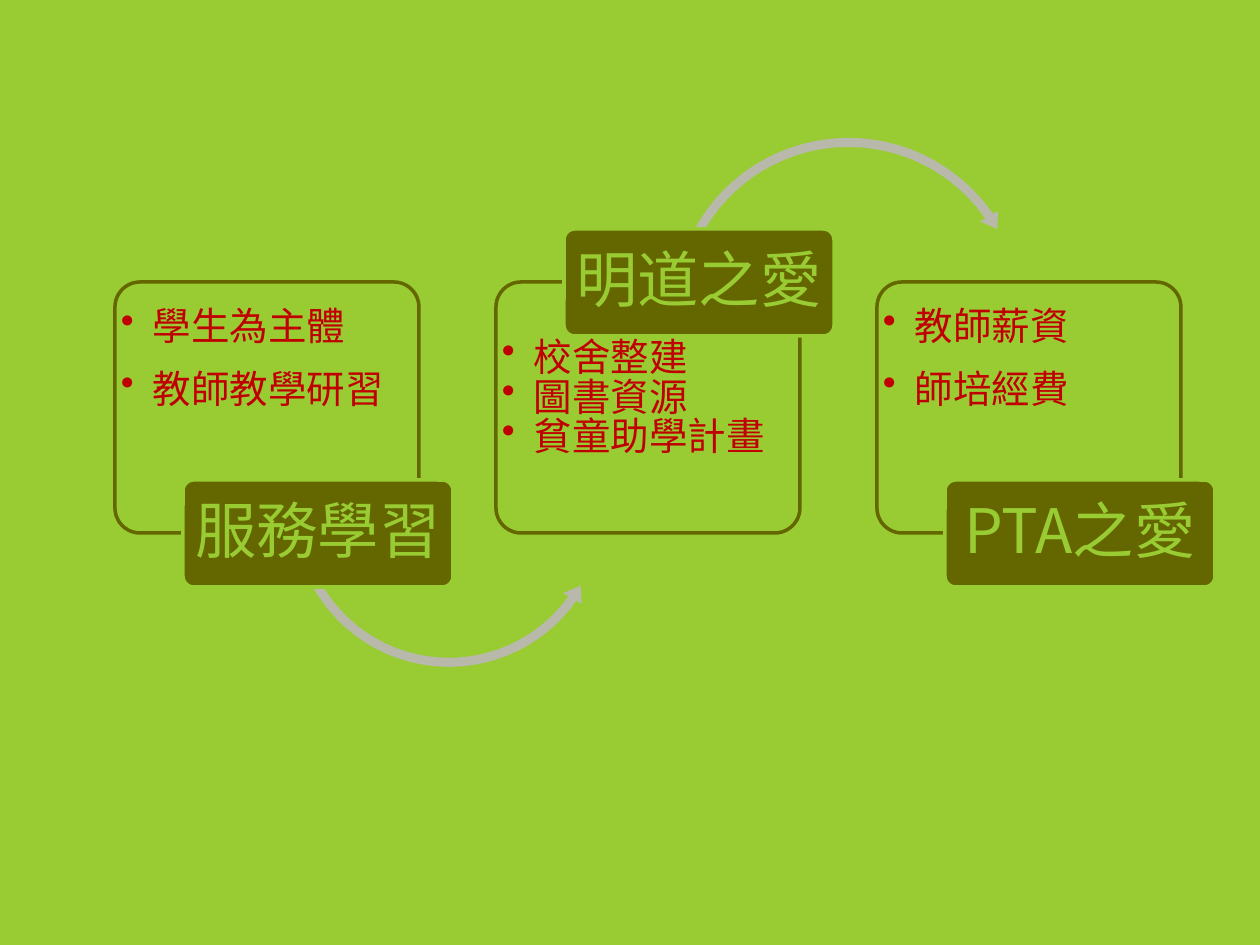
from dataclasses import dataclass

from lxml import etree
from pptx import Presentation
from pptx import util as u
from pptx.dml.color import RGBColor
from pptx.enum import shapes, text
from pptx.oxml.ns import qn

EMU_PER_PX = 914400 / 126
FRAME_LEFT, FRAME_TOP, FRAME_WIDTH, FRAME_HEIGHT = 115, 282, 304, 251
FRAME_PITCH = 381
BODY_HEIGHT = 197
LABEL_WIDTH, LABEL_HEIGHT, LABEL_SHIFT = 270, 107, 68
BULLET_INDENT = 32


@dataclass(frozen=True)
class Theme:
    background: RGBColor = RGBColor.from_string("99CC33")
    olive: RGBColor = RGBColor.from_string("646600")
    arrow: RGBColor = RGBColor.from_string("B8B8AB")
    bullet: RGBColor = RGBColor.from_string("C00000")
    font: str = "Noto Sans CJK SC"
    body_size: int = 22
    label_size: int = 35
    line_width: int = 2


THEME = Theme()

STAGES = [
    ("服務學習", ["學生為主體", "教師教學研習"], False),
    ("明道之愛", ["校舍整建", "圖書資源", "貧童助學計畫"], True),
    ("PTA之愛", ["教師薪資", "師培經費"], False),
]

ARROWS = [
    (shapes.MSO_SHAPE.LEFT_CIRCULAR_ARROW, (287, 349, 324, 324),
     (0.028, 3.452, 21.207, 90.245, 0.033)),
    (shapes.MSO_SHAPE.CIRCULAR_ARROW, (667, 132, 363, 363),
     (0.025, 3.062, 195.183, 125.755, 0.029)),
]


def px(value):
    return u.Emu(round(value * EMU_PER_PX))


def apply_format(target, values):
    for name, value in values.items():
        setattr(target, name, value)


def add_preset(slide, kind, box, adjustments, fill, line=None):
    shape = slide.shapes.add_shape(kind, *map(px, box))
    shape.shadow.inherit = False
    for index, value in enumerate(adjustments):
        shape.adjustments[index] = value
    shape.fill.solid()
    shape.fill.fore_color.rgb = fill
    if line is None:
        shape.line.fill.background()
    else:
        shape.line.color.rgb = line
        shape.line.width = u.Pt(THEME.line_width)
    return shape


def set_frame_format(text_frame, side, anchor, wrap):
    apply_format(text_frame, {
        "margin_left": px(side), "margin_right": px(side),
        "margin_top": px(6), "margin_bottom": px(6),
        "vertical_anchor": anchor, "word_wrap": wrap,
    })


def write_run(paragraph, wording, size, color):
    run = paragraph.add_run()
    run.text = wording
    apply_format(run.font, {"name": THEME.font, "size": u.Pt(size)})
    run.font.color.rgb = color
    etree.SubElement(run.font._element, qn("a:ea"), typeface=THEME.font)


def add_bullet(paragraph):
    properties = paragraph._p.get_or_add_pPr()
    properties.set("marL", str(px(BULLET_INDENT)))
    properties.set("indent", str(-px(BULLET_INDENT)))
    etree.SubElement(properties, qn("a:buChar"), char="•")


def add_frame(slide, left):
    frame = add_preset(slide, shapes.MSO_SHAPE.ROUNDED_RECTANGLE,
                       (left, FRAME_TOP, FRAME_WIDTH, FRAME_HEIGHT),
                       [0.1], THEME.background, THEME.olive)
    color = frame._element.spPr.find(qn("a:solidFill"))[0]
    etree.SubElement(color, qn("a:alpha"), val="90000")


def add_bullets(slide, left, top, items, line_spacing):
    box = slide.shapes.add_textbox(*map(px, (left, top, FRAME_WIDTH, BODY_HEIGHT)))
    set_frame_format(box.text_frame, 6, text.MSO_ANCHOR.TOP, True)
    for index, item in enumerate(items):
        paragraph = (box.text_frame.add_paragraph() if index
                     else box.text_frame.paragraphs[0])
        add_bullet(paragraph)
        apply_format(paragraph, {"line_spacing": line_spacing,
                                 "space_after": u.Pt(1.5)})
        write_run(paragraph, item, THEME.body_size, THEME.bullet)


def add_label(slide, left, top, wording):
    label = add_preset(slide, shapes.MSO_SHAPE.ROUNDED_RECTANGLE,
                       (left, top, LABEL_WIDTH, LABEL_HEIGHT),
                       [0.1], THEME.olive, THEME.background)
    set_frame_format(label.text_frame, 9, text.MSO_ANCHOR.MIDDLE, False)
    paragraph = label.text_frame.paragraphs[0]
    apply_format(paragraph, {"alignment": text.PP_ALIGN.CENTER, "line_spacing": 0.9})
    write_run(paragraph, wording, THEME.label_size, THEME.background)


def add_stage(slide, index, wording, items, label_on_top):
    left = FRAME_LEFT + index * FRAME_PITCH
    edge = FRAME_TOP if label_on_top else FRAME_TOP + FRAME_HEIGHT
    body_top = FRAME_TOP + (FRAME_HEIGHT - BODY_HEIGHT if label_on_top else 0)
    add_frame(slide, left)
    add_bullets(slide, left, body_top, items, 0.8 if label_on_top else 1.3)
    if index < len(ARROWS):
        kind, box, adjustments = ARROWS[index]
        add_preset(slide, kind, box, adjustments, THEME.arrow)
    add_label(slide, left + LABEL_SHIFT, edge - LABEL_HEIGHT // 2, wording)


def main():
    presentation = Presentation()
    apply_format(presentation, {"slide_width": px(1260), "slide_height": px(945)})
    slide = presentation.slides.add_slide(presentation.slide_layouts[6])
    slide.background.fill.solid()
    slide.background.fill.fore_color.rgb = THEME.background
    for index, stage in enumerate(STAGES):
        add_stage(slide, index, *stage)
    presentation.save("out.pptx")


if __name__ == "__main__":
    main()
